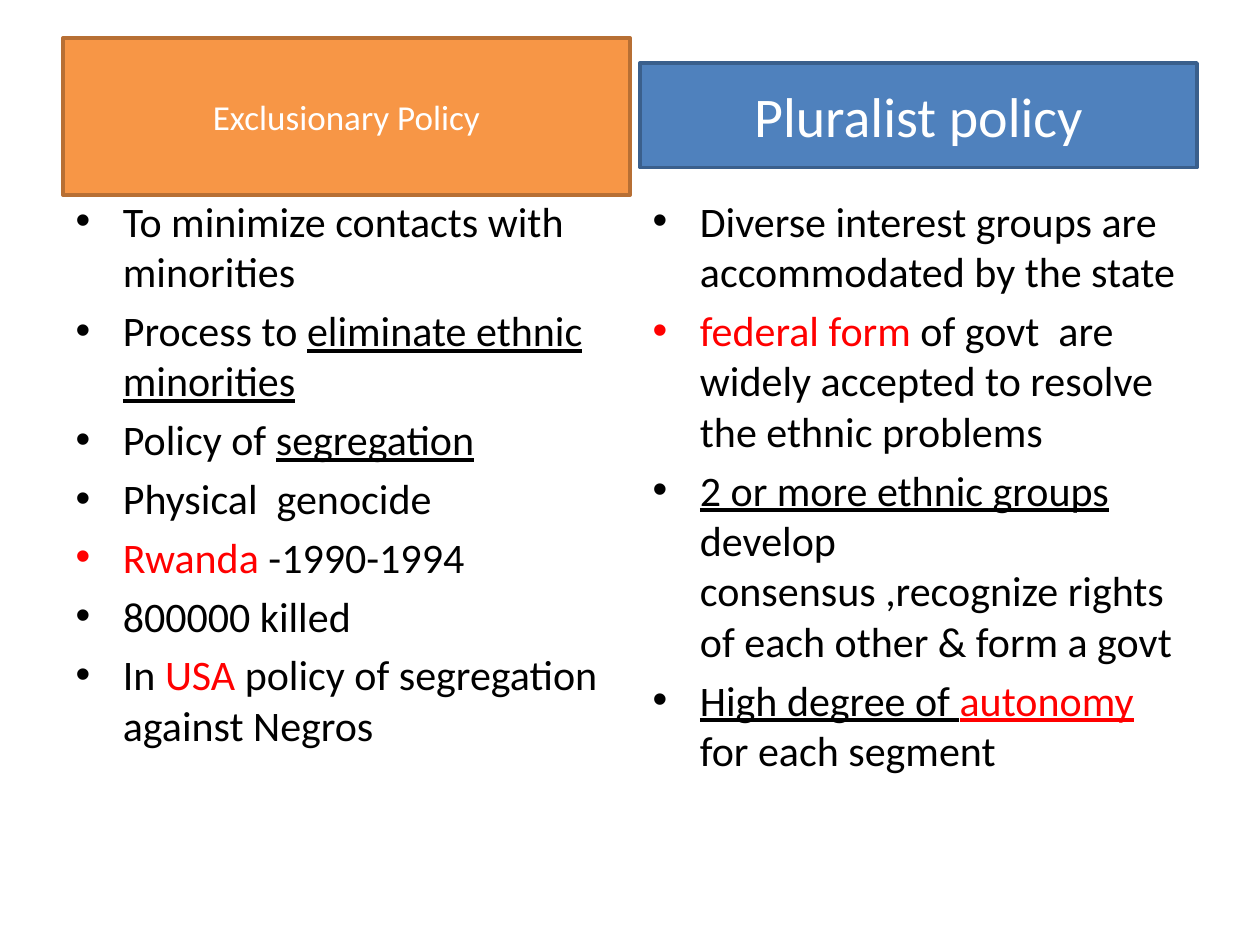
from pptx import Presentation
from pptx.dml.color import RGBColor
from pptx.enum.shapes import MSO_SHAPE
from pptx.enum.text import MSO_ANCHOR, MSO_AUTO_SIZE, PP_ALIGN
from pptx.util import Inches, Pt

BLACK = RGBColor(0x00, 0x00, 0x00)
WHITE = RGBColor(0xFF, 0xFF, 0xFF)
RED = RGBColor(0xFF, 0x00, 0x00)
ORANGE = RGBColor(0xF7, 0x96, 0x46)
DARK_ORANGE = RGBColor(0xB7, 0x6F, 0x34)
BLUE = RGBColor(0x4F, 0x81, 0xBD)
DARK_BLUE = RGBColor(0x3A, 0x5F, 0x8C)

TWO_CONTENT_LAYOUT = 3
LEFT_COLUMN, RIGHT_COLUMN = 0.5, 5.08
COLUMN_WIDTH = 4.42
LIST_TOP, LIST_HEIGHT = 1.5, 5.2


def span(text, color=BLACK, underline=None):
    return text, {"color": color, "underline": underline}


EXCLUSIONARY_POINTS = [
    [span("To minimize contacts with minorities")],
    [span("Process to "), span("eliminate ethnic minorities", underline=True)],
    [span("Policy of "), span("segregation", underline=True)],
    [span("Physical  genocide")],
    [span("Rwanda", RED), span(" -1990-1994")],
    [span("800000 killed")],
    [span("In "), span("USA", RED), span(" policy of segregation against Negros")],
]
PLURALIST_POINTS = [
    [span("Diverse interest groups are accommodated by the state")],
    [span("federal form ", RED),
     span("of govt  are widely accepted to resolve the ethnic problems")],
    [span("2 or more ethnic groups ", underline=True),
     span("develop consensus ,recognize rights of each other & form a govt")],
    [span("High degree of ", underline=True),
     span("autonomy ", RED, underline=True), span("for each segment")],
]


class PolicySlide:
    font_name = "Calibri"
    list_size = 24
    border_width = 2

    def __init__(self, deck):
        self.page = deck.slides.add_slide(deck.slide_layouts[TWO_CONTENT_LAYOUT])

    def add_span(self, para, text, size, color, underline=None):
        run = para.add_run()
        run.text = text
        run.font.name = self.font_name
        run.font.size = Pt(size)
        run.font.color.rgb = color
        run.font.underline = underline

    def place(self, box, left, top, width, height):
        box.left, box.top = Inches(left), Inches(top)
        box.width, box.height = Inches(width), Inches(height)

    def style_heading(self, box, text, size, fill, border):
        box.shadow.inherit = False
        box.fill.solid()
        box.fill.fore_color.rgb = fill
        box.line.color.rgb = border
        box.line.width = Pt(self.border_width)
        frame = box.text_frame
        frame.word_wrap = True
        frame.auto_size = MSO_AUTO_SIZE.NONE
        frame.vertical_anchor = MSO_ANCHOR.MIDDLE
        para = frame.paragraphs[0]
        para.alignment = PP_ALIGN.CENTER
        self.add_span(para, text, size, WHITE)

    def title(self, text, left, top, width, height, **style):
        box = self.page.shapes.title
        self.place(box, left, top, width, height)
        self.style_heading(box, text, **style)

    def heading(self, text, left, top, width, height, **style):
        box = self.page.shapes.add_shape(
            MSO_SHAPE.RECTANGLE,
            Inches(left), Inches(top), Inches(width), Inches(height))
        self.style_heading(box, text, **style)

    def bullets(self, index, left, points):
        box = self.page.placeholders[index]
        self.place(box, left, LIST_TOP, COLUMN_WIDTH, LIST_HEIGHT)
        frame = box.text_frame
        frame.auto_size = MSO_AUTO_SIZE.NONE
        for number, point in enumerate(points):
            para = frame.add_paragraph() if number else frame.paragraphs[0]
            for text, style in point:
                self.add_span(para, text, self.list_size, **style)


def main():
    deck = Presentation()
    deck.slide_width, deck.slide_height = Inches(10), Inches(7.5)
    slide = PolicySlide(deck)
    slide.title("Exclusionary Policy", LEFT_COLUMN, 0.3, 4.5, 1.25,
                size=20, fill=ORANGE, border=DARK_ORANGE)
    slide.bullets(1, LEFT_COLUMN, EXCLUSIONARY_POINTS)
    slide.bullets(2, RIGHT_COLUMN, PLURALIST_POINTS)
    slide.heading("Pluralist policy", RIGHT_COLUMN, 0.5, COLUMN_WIDTH, 0.83,
                  size=32, fill=BLUE, border=DARK_BLUE)
    deck.save("out.pptx")


if __name__ == "__main__":
    main()
